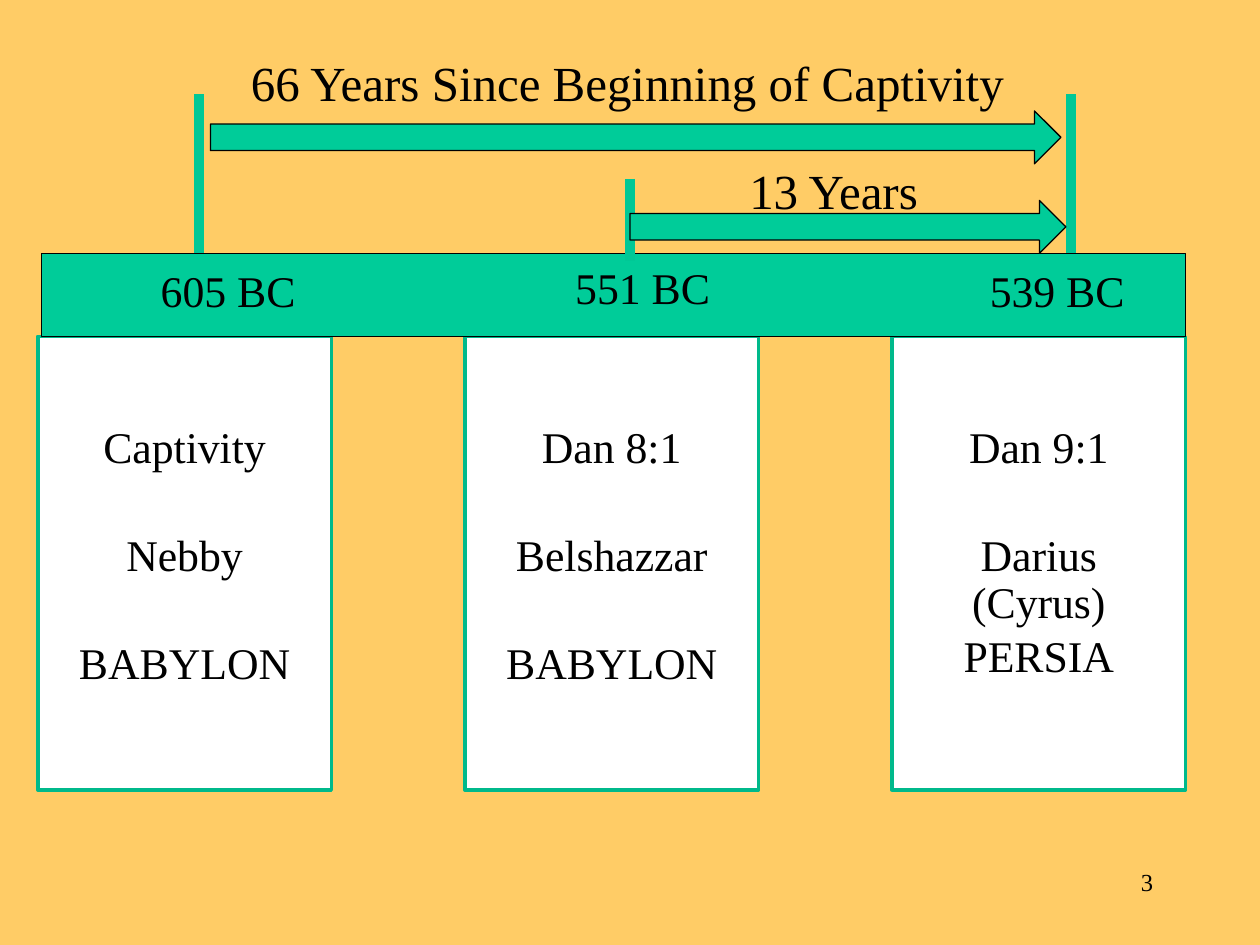
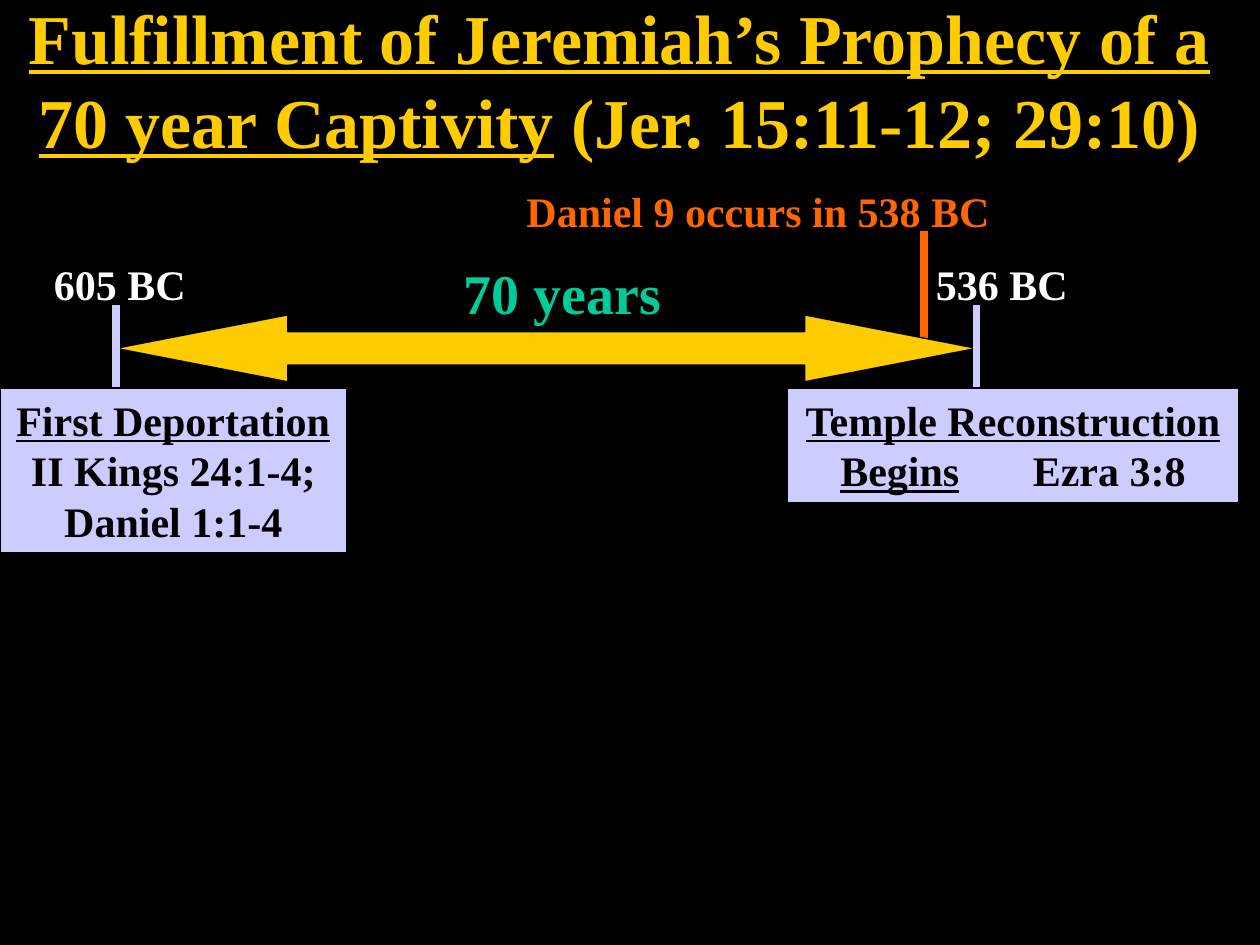
import pptx
import pptx.dml.color
import pptx.enum.shapes
import pptx.enum.text
import pptx.oxml.ns
import pptx.util
from lxml import etree

Inches, Pt = pptx.util.Inches, pptx.util.Pt
SHAPE = pptx.enum.shapes.MSO_SHAPE
ALIGN = pptx.enum.text.PP_ALIGN
ANCHOR = pptx.enum.text.MSO_ANCHOR

FONT = "Times New Roman"
BLACK, WHITE = "000000", "FFFFFF"
SAND, GREEN, TICK_GREEN, CARD_EDGE = "FFCC66", "00CC99", "00C896", "00B98B"
GOLD, ORANGE, LAVENDER = "FFCC00", "FF6600", "CCCCFF"
TITLE_ONLY, BLANK = 5, 6


def colour(value):
    return pptx.dml.color.RGBColor.from_string(value)


def apply(target, values):
    for name, value in values.items():
        setattr(target, name, value)


def add_page(deck, layout, background):
    page = deck.slides.add_slide(deck.slide_layouts[layout])
    page.background.fill.solid()
    page.background.fill.fore_color.rgb = colour(background)
    return page


def add_span(para, text, size, ink, **font):
    span = para.add_run()
    span.text = text
    apply(span.font, {"name": FONT, "size": Pt(size), **font})
    span.font.color.rgb = colour(ink)
    return span


def add_shape(page, kind, box, fill, edge=BLACK, weight=0.75):
    shape = page.shapes.add_shape(kind, *map(Inches, box))
    shape.shadow.inherit = False
    shape.fill.solid()
    shape.fill.fore_color.rgb = colour(fill)
    shape.line.color.rgb = colour(edge)
    shape.line.width = Pt(weight)
    return shape


def add_tick(page, x, top, bottom, ink, weight):
    """Draw a vertical date mark."""
    tick = page.shapes.add_connector(
        pptx.enum.shapes.MSO_CONNECTOR.STRAIGHT,
        *map(Inches, (x, top, x, bottom)))
    tick.line.color.rgb = colour(ink)
    tick.line.width = Pt(weight)
    etree.SubElement(tick._element.spPr, pptx.oxml.ns.qn("a:effectLst"))


def add_label(page, box, text, size, ink=BLACK, align=ALIGN.LEFT,
              wrap=True, spacing=1.0, **font):
    label = page.shapes.add_textbox(*map(Inches, box))
    label.text_frame.word_wrap = wrap
    para = label.text_frame.paragraphs[0]
    apply(para, {"alignment": align, "line_spacing": spacing})
    add_span(para, text, size, ink, **font)


def add_centred_label(page, box, text, size):
    add_label(page, box, text, size, align=ALIGN.CENTER, wrap=False, spacing=0.9)


def add_event_card(page, box, lines):
    """Draw a white card from (text, points above) pairs."""
    card = add_shape(page, SHAPE.RECTANGLE, box, WHITE, CARD_EDGE, 2)
    frame = card.text_frame
    apply(frame, {"word_wrap": True, "vertical_anchor": ANCHOR.TOP,
                  "margin_left": Inches(0.25), "margin_right": Inches(0.25),
                  "margin_top": Inches(0.71), "margin_bottom": Inches(0.25)})
    for index, (text, gap) in enumerate(lines):
        para = frame.add_paragraph() if index else frame.paragraphs[0]
        apply(para, {"alignment": ALIGN.CENTER, "line_spacing": 0.9,
                     "space_before": Pt(gap)})
        add_span(para, text, 25, BLACK)


def add_event_cards(page, left, top):
    wide, tight = 34.6, 3.9
    events = [
        [("Captivity", 0), ("Nebby", wide), ("BABYLON", wide)],
        [("Dan 8:1", 0), ("Belshazzar", wide), ("BABYLON", wide)],
        [("Dan 9:1", 0), ("Darius (Cyrus)", wide), ("PERSIA", tight)],
    ]
    for column, lines in enumerate(events):
        add_event_card(page, (left + column * 3.39, top, 2.33, 3.6), lines)


def add_date_band(page, left, top):
    add_shape(page, SHAPE.FLOWCHART_PROCESS, (left, top, 9.08, 0.66), GREEN)
    dates = [("605 BC", 0.84, 0.08), ("551 BC", 4.13, 0.06), ("539 BC", 7.42, 0.08)]
    for text, x, y in dates:
        add_centred_label(page, (left + x, top + y, 1.28, 0.48), text, 25)


def add_year_spans(page, bottom):
    """Draw the ticks and arrows that stand on the date band."""
    for x, height, foot in [(1.58, 1.26, 0), (8.5, 1.26, 0), (5, 0.59, 0.06)]:
        add_tick(page, x, bottom - height, bottom + foot, TICK_GREEN, 6)
    for x, rise, width in [(1.67, 1.13, 6.75), (5, 0.42, 3.46)]:
        add_shape(page, SHAPE.RIGHT_ARROW, (x, bottom - rise, width, 0.42), GREEN)
    add_centred_label(page, (1.86, bottom - 1.59, 6.24, 0.53),
                      "66 Years Since Beginning of Captivity", 28)
    add_centred_label(page, (5.84, bottom - 0.73, 1.55, 0.53), "13 Years", 28)


def build_captivity_page(deck):
    page = add_page(deck, BLANK, SAND)
    band_top = 2.01
    add_event_cards(page, 0.3, band_top + 0.66)
    add_date_band(page, 0.33, band_top)
    add_year_spans(page, band_top)
    add_label(page, (7.17, 6.83, 2.08, 0.5), "3", 14, align=ALIGN.RIGHT)


def add_prophecy_title(page, box):
    title = page.shapes.title
    apply(title, dict(zip(("left", "top", "width", "height"), map(Inches, box))))
    apply(title.text_frame, {"word_wrap": True, "vertical_anchor": ANCHOR.MIDDLE,
                             "auto_size": pptx.enum.text.MSO_AUTO_SIZE.NONE})
    para = title.text_frame.paragraphs[0]
    para.alignment = ALIGN.CENTER
    add_span(para, "Fulfillment of Jeremiah’s Prophecy of a 70 year Captivity",
             40, GOLD, bold=True, underline=True)
    add_span(para, " (Jer. 15:11-12; 29:10)", 40, GOLD, bold=True, underline=False)


def add_event_note(page, box, pieces):
    """Draw a lavender note from (text, underlined, letter spacing) pieces."""
    note = add_shape(page, SHAPE.RECTANGLE, box, LAVENDER, weight=1)
    apply(note.text_frame, {"word_wrap": True, "vertical_anchor": ANCHOR.TOP})
    para = note.text_frame.paragraphs[0]
    para.alignment = ALIGN.CENTER
    for text, underlined, spacing in pieces:
        span = add_span(para, text, 24, BLACK, bold=True, underline=underlined)
        if spacing:
            span.font._element.set("spc", str(spacing * 100))


def add_seventy_years(page, left, top):
    """Draw the double arrow with its end dates and labels."""
    length = 6.83
    add_tick(page, left + 6.41, top - 0.67, top + 0.25, ORANGE, 4.5)
    arrow = add_shape(page, SHAPE.LEFT_RIGHT_ARROW, (left, top, length, 0.53), GOLD)
    arrow.adjustments[0], arrow.adjustments[1] = 0.5, 2.573
    for x in (left, left + length):
        add_tick(page, x, top - 0.08, top + 0.58, LAVENDER, 4.5)
    labels = [
        (-0.59, -0.5, 1.25, "605 BC", 24, WHITE),
        (6.41, -0.5, 1.25, "536 BC", 24, WHITE),
        (2.66, -0.5, 1.83, "70 years", 32, GREEN),
        (3.16, -1.08, 3.92, "Daniel 9 occurs in 538 BC", 24, ORANGE),
    ]
    for x, y, width, text, size, ink in labels:
        add_label(page, (left + x, top + y, width, 0.5), text, size, ink, bold=True)


def build_prophecy_page(deck):
    page = add_page(deck, TITLE_ONLY, BLACK)
    add_prophecy_title(page, (0, 0, 9.83, 1.25))
    add_seventy_years(page, 0.92, 2.5)
    add_event_note(page, (0, 3.08, 2.75, 1.31), [
        ("First Deportation", True, 0),
        (" II Kings 24:1-4; Daniel 1:1-4", False, 0)])
    add_event_note(page, (6.25, 3.08, 3.58, 0.91), [
        ("Temple Reconstruction", True, 0), (" ", False, 0),
        ("Begins", True, 0), (" ", False, 36), ("Ezra 3:8", False, 0)])


def main():
    deck = pptx.Presentation()
    apply(deck, {"slide_width": Inches(10), "slide_height": Inches(7.5)})
    build_captivity_page(deck)
    build_prophecy_page(deck)
    deck.save("out.pptx")


if __name__ == "__main__":
    main()
